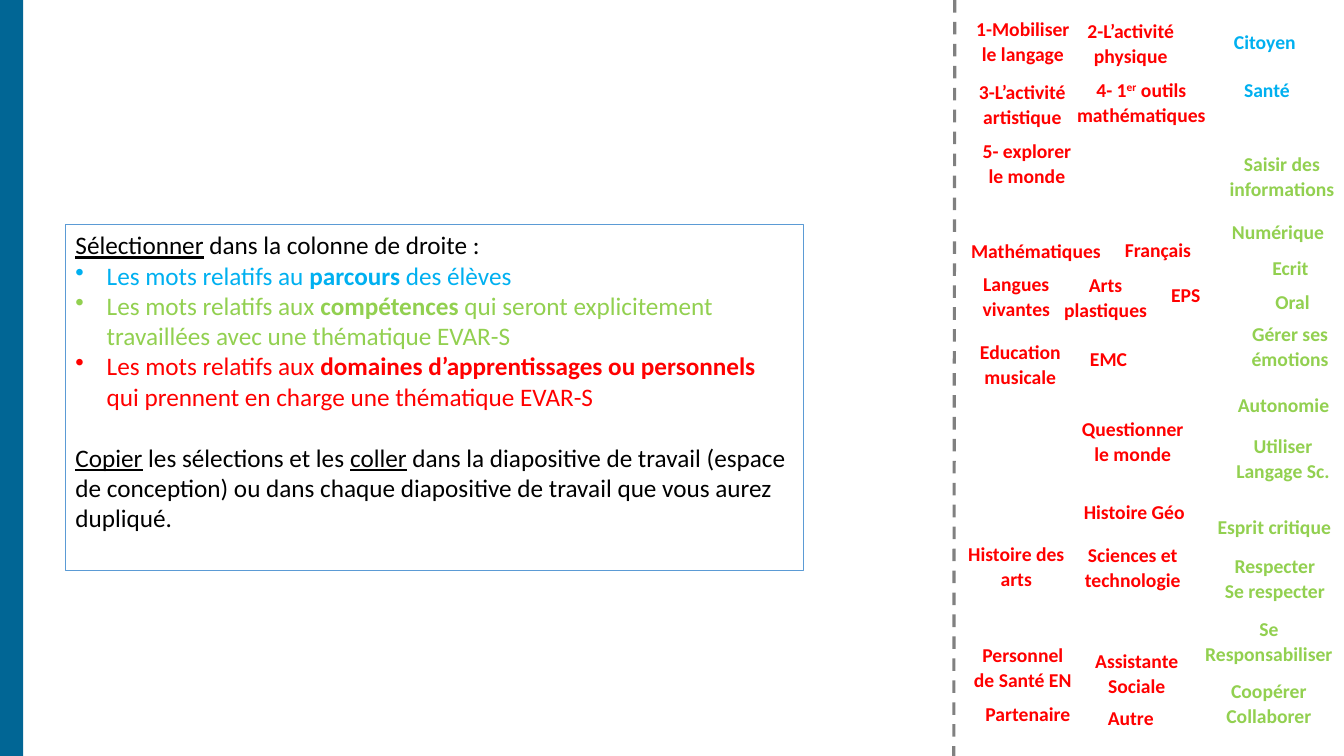
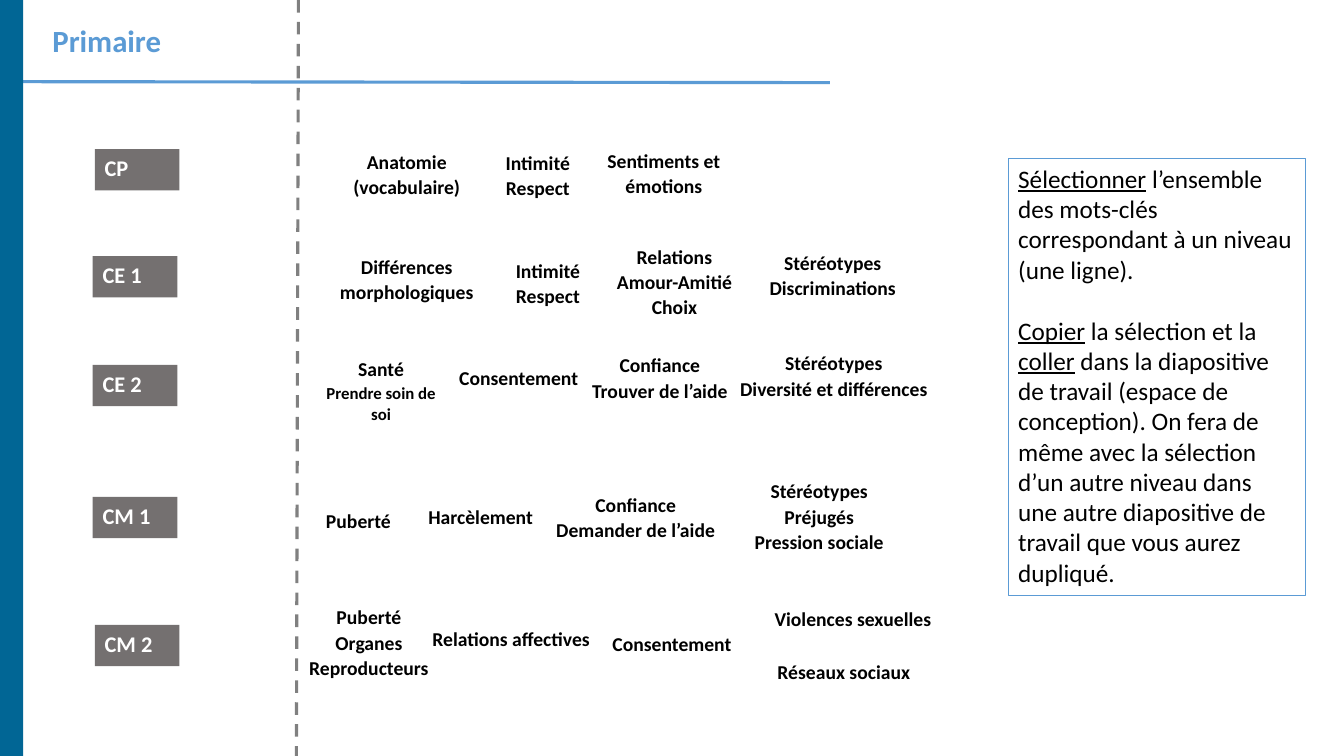
from lxml import etree
from pptx import Presentation
from pptx.dml.color import RGBColor
from pptx.enum.dml import MSO_LINE
from pptx.enum.shapes import MSO_CONNECTOR, MSO_SHAPE
from pptx.enum.text import MSO_ANCHOR, MSO_AUTO_SIZE, PP_ALIGN
from pptx.oxml.ns import qn
from pptx.util import Pt

PX = 9144  # EMU, 100 px to the inch
WIDTH, HEIGHT = 1333, 750
FONT = "Calibri"
LEFT, CENTER = PP_ALIGN.LEFT, PP_ALIGN.CENTER
TOP, MIDDLE = MSO_ANCHOR.TOP, MSO_ANCHOR.MIDDLE
DASH = MSO_LINE.DASH

BLACK = RGBColor(0x00, 0x00, 0x00)
WHITE = RGBColor(0xFF, 0xFF, 0xFF)
BAND_BLUE = RGBColor(0x01, 0x66, 0x95)
ACCENT_BLUE = RGBColor(0x5B, 0x9B, 0xD5)
SKY_BLUE = RGBColor(0x00, 0xB0, 0xF0)
GREEN = RGBColor(0x92, 0xD0, 0x50)
RED = RGBColor(0xFF, 0x00, 0x00)
GRAY = RGBColor(0x80, 0x80, 0x80)
LEVEL_GRAY = RGBColor(0x74, 0x70, 0x70)


def add_line(slide, start, end, color, dash=None):
    points = [value * PX for value in (*start, *end)]
    connector = slide.shapes.add_connector(MSO_CONNECTOR.STRAIGHT, *points)
    connector.line.color.rgb = color
    connector.line.width = Pt(2.25)
    if dash:
        connector.line.dash_style = dash
    etree.SubElement(connector._element.spPr, qn("a:effectLst"))


def add_rectangle(slide, box, fill, outline=None):
    shape = slide.shapes.add_shape(MSO_SHAPE.RECTANGLE, *[value * PX for value in box])
    shape.shadow.inherit = False
    shape.fill.solid()
    shape.fill.fore_color.rgb = fill
    if outline:
        shape.line.color.rgb = outline
        shape.line.width = Pt(1)
    else:
        shape.line.fill.background()
    shape.text_frame.vertical_anchor = TOP
    return shape


presentation = Presentation()
presentation.slide_width = WIDTH * PX
presentation.slide_height = HEIGHT * PX
title_only, blank = presentation.slide_layouts[5], presentation.slide_layouts[6]
skills = presentation.slides.add_slide(blank)
levels = presentation.slides.add_slide(title_only)

# Title of the levels slide
title = levels.shapes.title
title.left, title.top, title.width, title.height = [value * PX for value in (42, 12, 140, 56)]
title.text_frame.text = "Primaire"
title.text_frame.auto_size = MSO_AUTO_SIZE.NONE
title.text_frame.word_wrap = False
title.text_frame.vertical_anchor = MIDDLE
paragraph = title.text_frame.paragraphs[0]
paragraph.alignment = LEFT
paragraph.font.name = FONT
paragraph.font.size = Pt(22)
paragraph.font.bold = True
paragraph.font.color.rgb = ACCENT_BLUE
add_line(levels, (0, 81), (823, 82), ACCENT_BLUE)

# Side band and dashed separator
for slide, top_x, bottom_x in [(skills, 947, 946), (levels, 296, 294)]:
    add_rectangle(slide, (0, 0, 23, HEIGHT), BAND_BLUE)
    add_line(slide, (top_x, 0), (bottom_x, HEIGHT), GRAY, DASH)

# Keywords: text, left, top, width, height; ^ encloses a superscript
PATHWAYS = [
    ("Citoyen", 1214, 23, 100, 34),
    ("Santé", 1224, 71, 80, 34),
]
SHORT_SKILLS = [
    ("Numérique", 1212, 212, 123, 48),
    ("Ecrit", 1252, 247, 61, 48),
    ("Oral", 1255, 281, 59, 48),
]
SKILLS = [
    ("Saisir des\ninformations", 1203, 144, 137, 67),
    ("Gérer ses\némotions", 1224, 313, 111, 62),
    ("Autonomie", 1212, 383, 122, 43),
    ("Utiliser\nLangage Sc.", 1210, 424, 125, 65),
    ("Esprit critique", 1191, 504, 146, 39),
    ("Respecter\nSe respecter", 1198, 543, 133, 88),
    ("Se\nResponsabiliser", 1178, 605, 161, 65),
    ("Coopérer\nCollaborer", 1201, 667, 115, 63),
]
DOMAINS = [
    ("1-Mobiliser le langage", 953, 10, 123, 56),
    ("2-L’activité physique", 1060, 12, 123, 56),
    ("3-L’activité artistique", 941, 73, 146, 57),
    ("4- 1^er^ outils mathématiques", 1054, 71, 156, 66),
    ("5- explorer le monde", 957, 131, 123, 75),
    ("Mathématiques", 952, 230, 151, 38),
    ("Français", 1087, 230, 123, 60),
    ("Langues vivantes", 935, 263, 146, 46),
    ("Arts plastiques", 1039, 264, 115, 74),
    ("EPS", 1131, 274, 90, 36),
    ("Education musicale", 935, 331, 154, 51),
    ("EMC", 1058, 338, 83, 31),
    ("Questionner le monde", 1062, 407, 123, 54),
    ("Histoire Géo", 1052, 489, 146, 42),
    ("Histoire des arts", 935, 531, 146, 67),
    ("Sciences et technologie", 1062, 532, 123, 64),
    ("Personnel de Santé EN", 953, 631, 123, 67),
    ("Assistante Sociale", 1066, 637, 123, 51),
    ("Partenaire", 958, 690, 123, 42),
    ("Autre", 1060, 694, 123, 33),
]
TOPICS = [
    ("Anatomie\n(vocabulaire)", 340, 142, 127, 92),
    ("Intimité\nRespect", 491, 143, 85, 92),
    ("Sentiments et\némotions", 592, 141, 133, 92),
    ("Différences\nmorphologiques", 327, 246, 153, 92),
    ("Intimité\nRespect", 501, 250, 85, 92),
    ("Relations\nAmour-Amitié\nChoix", 601, 236, 136, 92),
    ("Stéréotypes\nDiscriminations", 753, 242, 146, 92),
    ("Santé\nPrendre soin de soi", 303, 348, 150, 110),
    ("Consentement", 445, 356, 139, 92),
    ("Confiance\nTrouver de l’aide", 576, 344, 157, 92),
    ("Stéréotypes\nDiversité et différences", 723, 342, 208, 92),
    ("Puberté", 313, 498, 85, 54),
    ("Confiance\nDemander de l’aide", 541, 482, 179, 92),
    ("Stéréotypes\nPréjugés\nPression sociale", 738, 469, 149, 92),
    ("Puberté\nOrganes\nReproducteurs", 296, 594, 140, 130),
    ("Consentement", 597, 620, 139, 92),
    ("Violences sexuelles", 758, 596, 176, 92),
    ("Réseaux sociaux", 761, 648, 152, 45),
]
LEFT_TOPICS = [
    ("Harcèlement", 415, 494, 125, 92),
    ("Relations affectives", 419, 615, 178, 92),
]
KEYWORD_GROUPS = [
    (skills, PATHWAYS, SKY_BLUE, LEFT, False),
    (skills, SHORT_SKILLS, GREEN, LEFT, False),
    (skills, SKILLS, GREEN, CENTER, False),
    (skills, DOMAINS, RED, CENTER, True),
    (levels, TOPICS, BLACK, CENTER, False),
    (levels, LEFT_TOPICS, BLACK, LEFT, False),
]
SMALL_LINES = {"Prendre soin de soi": 12}

for slide, keywords, color, alignment, wraps in KEYWORD_GROUPS:
    for text, *box in keywords:
        text_frame = slide.shapes.add_textbox(*[value * PX for value in box]).text_frame
        text_frame.word_wrap = wraps
        for index, line in enumerate(text.split("\n")):
            paragraph = text_frame.add_paragraph() if index else text_frame.paragraphs[0]
            paragraph.alignment = alignment
            paragraph.line_spacing = 1.07
            paragraph.font.name = FONT
            paragraph.font.size = Pt(SMALL_LINES.get(line, 14))
            paragraph.font.bold = True
            paragraph.font.color.rgb = color
            for position, piece in enumerate(line.split("^")):
                run = paragraph.add_run()
                run.text = piece
                if position % 2:
                    run._r.get_or_add_rPr().set("baseline", "30000")

# Level tags
for text, left, top in [("CP", 94, 148), ("CE 1", 92, 254), ("CE 2", 92, 362),
                        ("CM 1", 92, 493), ("CM 2", 94, 620)]:
    tag = add_rectangle(levels, (left, top, 84, 41), LEVEL_GRAY)
    tag.text_frame.text = text
    paragraph = tag.text_frame.paragraphs[0]
    paragraph.alignment = LEFT
    paragraph.font.name = FONT
    paragraph.font.size = Pt(16)
    paragraph.font.bold = True
    paragraph.font.color.rgb = WHITE

# Instructions: each paragraph has a colour, bullet, space before and runs
PLAIN, BOLD, UNDERLINED = "plain", "bold", "underlined"
INSTRUCTIONS = [
    (skills, (65, 223, 732, 343), [
        (BLACK, False, 0, [("Sélectionner", UNDERLINED), (" dans la colonne de droite :", PLAIN)]),
        (SKY_BLUE, True, 0, [("Les mots relatifs au ", PLAIN), ("parcours", BOLD),
                             (" des élèves", PLAIN)]),
        (GREEN, True, 0, [("Les mots relatifs aux ", PLAIN), ("compétences", BOLD),
                          (" qui seront explicitement travaillées avec une thématique EVAR-S", PLAIN)]),
        (RED, True, 0, [("Les mots relatifs aux ", PLAIN),
                        ("domaines d’apprentissages ou personnels ", BOLD),
                        ("qui prennent en charge une thématique EVAR-S", PLAIN)]),
        (BLACK, False, 22, [("Copier", UNDERLINED), (" les sélections et les ", PLAIN),
                            ("coller", UNDERLINED),
                            (" dans la diapositive de travail (espace de conception) ou dans "
                             "chaque diapositive de travail que vous aurez dupliqué.", PLAIN)]),
    ]),
    (levels, (1000, 157, 295, 434), [
        (BLACK, False, 0, [("Sélectionner", UNDERLINED),
                           (" l’ensemble des mots-clés correspondant à un niveau (une ligne).", PLAIN)]),
        (BLACK, False, 22, [("Copier", UNDERLINED), (" la sélection et la ", PLAIN),
                            ("coller", UNDERLINED),
                            (" dans la diapositive de travail (espace de conception). On fera de "
                             "même avec la sélection d’un autre niveau dans une autre diapositive "
                             "de travail que vous aurez dupliqué.", PLAIN)]),
    ]),
]

for slide, box, paragraphs in INSTRUCTIONS:
    text_frame = add_rectangle(slide, box, WHITE, ACCENT_BLUE).text_frame
    text_frame.word_wrap = True
    for index, (color, bulleted, space_before, runs) in enumerate(paragraphs):
        paragraph = text_frame.add_paragraph() if index else text_frame.paragraphs[0]
        paragraph.alignment = LEFT
        paragraph.space_before = Pt(space_before)
        paragraph.font.name = FONT
        paragraph.font.size = Pt(18)
        paragraph.font.color.rgb = color
        if bulleted:
            properties = paragraph._p.get_or_add_pPr()
            properties.set("marL", str(31 * PX))
            properties.set("indent", str(-31 * PX))
            bullet = etree.Element(qn("a:buChar"), char="•")
            properties.find(qn("a:defRPr")).addprevious(bullet)
        for text, style in runs:
            run = paragraph.add_run()
            run.text = text
            if style == BOLD:
                run.font.bold = True
            elif style == UNDERLINED:
                run.font.underline = True

presentation.save("out.pptx")
